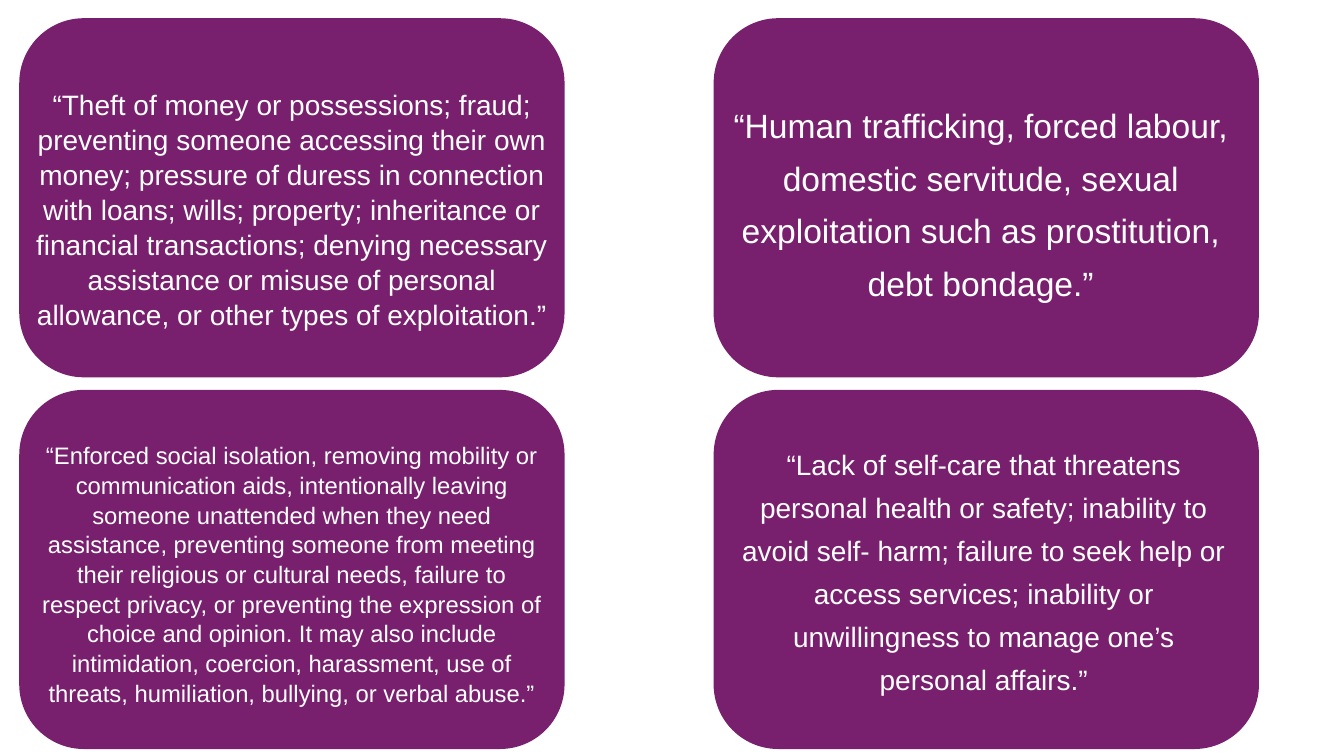
from pptx import Presentation
from pptx.dml.color import RGBColor
from pptx.enum.shapes import MSO_SHAPE
from pptx.enum.text import MSO_ANCHOR, PP_ALIGN
from pptx.util import Pt

ROUNDED = MSO_SHAPE.ROUNDED_RECTANGLE
MIDDLE = MSO_ANCHOR.MIDDLE
CENTER = PP_ALIGN.CENTER

THEME = {
    "font": "Arial",
    "card": RGBColor(0x78, 0x20, 0x6E),
    "text": RGBColor(0xFF, 0xFF, 0xFF),
    "large": 24,
    "medium": 20,
    "small": 17,
}

FINANCIAL = (
    "“Theft of money or possessions; fraud; preventing someone accessing their "
    "own money; pressure of duress in connection with loans; wills; property; "
    "inheritance or financial transactions; denying necessary assistance or "
    "misuse of personal allowance, or other types of exploitation.”"
)
SLAVERY = (
    "“Human trafficking, forced labour, domestic servitude, sexual exploitation "
    "such as prostitution, debt bondage.”"
)
PSYCHOLOGICAL = (
    "“Enforced social isolation, removing mobility or communication aids, "
    "intentionally leaving someone unattended when they need assistance, "
    "preventing someone from meeting their religious or cultural needs, failure "
    "to respect privacy, or preventing the expression of choice and opinion. It "
    "may also include intimidation, coercion, harassment, use of threats, "
    "humiliation, bullying, or verbal abuse.”"
)
SELF_NEGLECT = (
    "“Lack of self-care that threatens personal health or safety; inability to "
    "avoid self- harm; failure to seek help or access services; inability or "
    "unwillingness to manage one’s personal affairs.”"
)

# (text, size, line spacing, box offset in card, box size, side margins)
CARDS = [
    (FINANCIAL, "medium", 1.04, (0, 47.5), (389.5, 177), (0, 0)),
    (SLAVERY, "large", 1.3, (0, 54), (389.5, 149), (6, 14)),
    (PSYCHOLOGICAL, "small", 1.04, (5.75, 34.5), (378, 193), (0, 0)),
    (SELF_NEGLECT, "medium", 1.28, (4.5, 34.5), (385, 183.5), (6, 14)),
]
COLUMNS = 2
CARD_W, CARD_H = 389.5, 256.5
LEFT, TOP = 13.75, 13
STEP_X, STEP_Y = 496, 265.5


def add_card(s, x, y):
    sp = s.shapes.add_shape(ROUNDED, Pt(x), Pt(y), Pt(CARD_W), Pt(CARD_H))
    sp.adjustments[0] = 0.18
    sp.shadow.inherit = False
    sp.fill.solid()
    sp.fill.fore_color.rgb = THEME["card"]
    sp.line.fill.background()


def add_quote(s, x, y, w, h, text, size, spacing, margins):
    tf = s.shapes.add_textbox(Pt(x), Pt(y), Pt(w), Pt(h)).text_frame
    tf.word_wrap = True
    tf.vertical_anchor = MIDDLE
    p = tf.paragraphs[0]
    p.text = text
    p.alignment = CENTER
    p.line_spacing = spacing
    p.font.name = THEME["font"]
    p.font.size = Pt(THEME[size])
    p.font.color.rgb = THEME["text"]
    for side, margin in zip(("marL", "marR"), margins):
        p._p.get_or_add_pPr().set(side, str(Pt(margin)))


def main():
    prs = Presentation()
    prs.slide_width, prs.slide_height = Pt(960), Pt(540)
    s = prs.slides.add_slide(prs.slide_layouts[6])
    for i, (text, size, spacing, offset, box, margins) in enumerate(CARDS):
        row, col = divmod(i, COLUMNS)
        x, y = LEFT + col * STEP_X, TOP + row * STEP_Y
        add_card(s, x, y)
        add_quote(s, x + offset[0], y + offset[1], *box, text, size, spacing, margins)
    prs.save("out.pptx")


if __name__ == "__main__":
    main()
